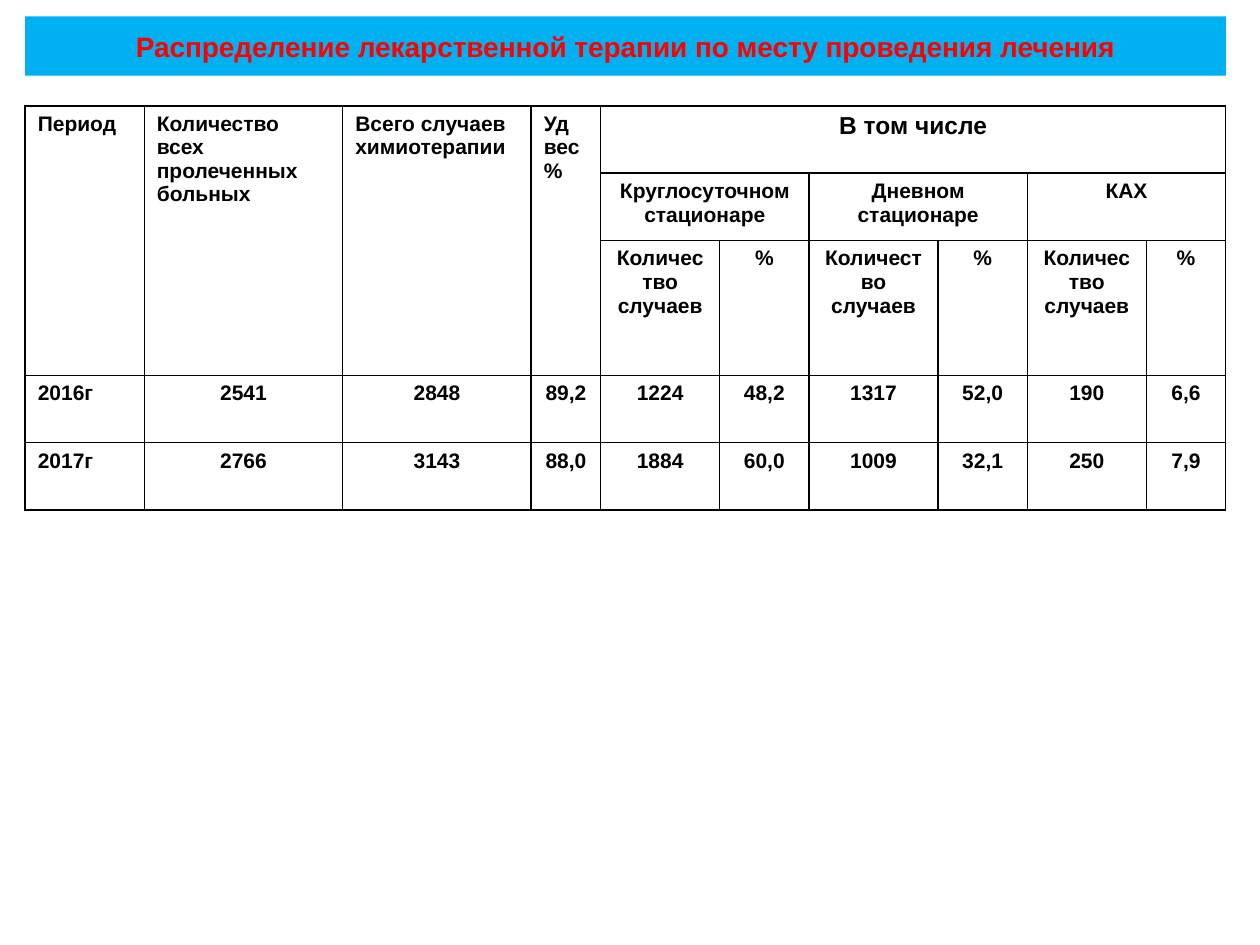
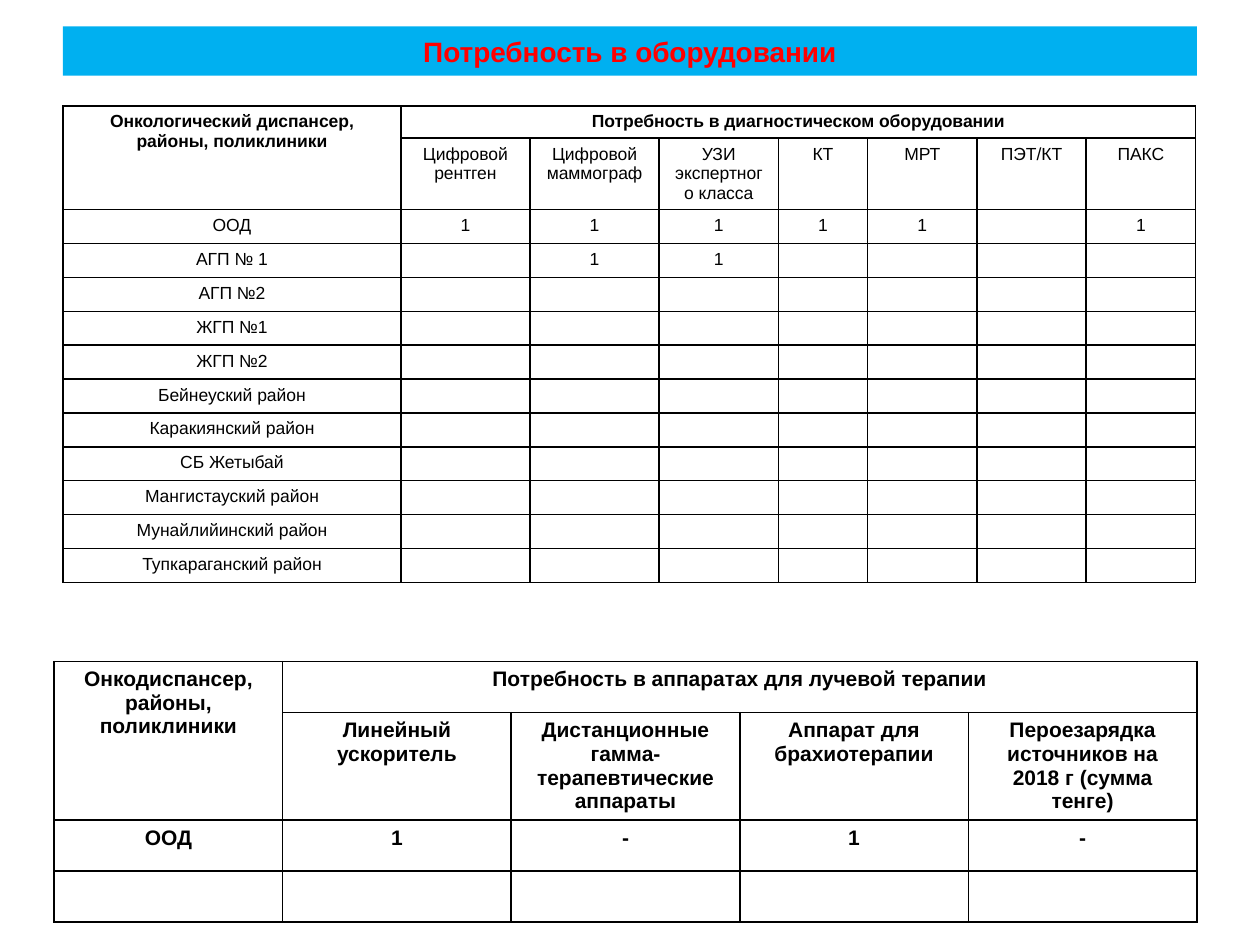
import pptx
import pptx.util
from lxml import etree
from pptx.dml.color import RGBColor
from pptx.enum.shapes import MSO_SHAPE
from pptx.enum.text import MSO_ANCHOR, PP_ALIGN
from pptx.oxml.ns import qn

# Shared look
BAND_BLUE = RGBColor(0x00, 0xB0, 0xF0)
TITLE_RED = RGBColor(0xFF, 0x00, 0x00)
BLACK = RGBColor(0x00, 0x00, 0x00)
FONT = "Arial"
TITLE_SIZE = 16
TABLE_TOP = 11.2  # percent of the slide's height

SLIDE_WIDTH = pptx.util.Inches(10)
SLIDE_HEIGHT = pptx.util.Inches(7.5)


def place(left, top, width, height):
    """Turn percents of the slide into a position and a size."""
    return [
        round(share * side / 100)
        for share, side in zip(
            (left, top, width, height), (SLIDE_WIDTH, SLIDE_HEIGHT) * 2
        )
    ]


def add_text(para, text, size, color=BLACK, bold=True, align=PP_ALIGN.CENTER):
    para.alignment = align
    if not text:
        # An empty cell keeps the height of its own text size
        etree.SubElement(para._p, qn("a:endParaRPr"), sz=str(size * 100))
        return
    span = para.add_run()
    span.text = text
    span.font.name = FONT
    span.font.size = pptx.util.Pt(size)
    span.font.bold = bold
    span.font.color.rgb = color


def add_title_band(page, text, area):
    band = page.shapes.add_shape(MSO_SHAPE.RECTANGLE, *place(*area))
    band.shadow.inherit = False
    band.fill.solid()
    band.fill.fore_color.rgb = BAND_BLUE
    band.line.fill.background()
    frame = band.text_frame
    frame.word_wrap = True
    frame.vertical_anchor = MSO_ANCHOR.MIDDLE
    add_text(frame.paragraphs[0], text, TITLE_SIZE, TITLE_RED)


def draw_borders(cell):
    properties = cell._tc.get_or_add_tcPr()
    for side in ("lnL", "lnR", "lnT", "lnB"):
        line = etree.SubElement(
            properties, qn(f"a:{side}"), w=str(pptx.util.Pt(1))
        )
        fill = etree.SubElement(line, qn("a:solidFill"))
        etree.SubElement(fill, qn("a:srgbClr"), val=str(BLACK))


def share_out(tracks, weights, total, attribute):
    """Divide a length among columns or rows by weight."""
    for track, weight in zip(tracks, weights):
        setattr(track, attribute, round(total * weight / sum(weights)))


def add_grid(page, area, columns, rows, texts, merges, style):
    """Draw a table; style(row, column) gives the text options of a cell."""
    left, top, width, height = place(*area)
    table = page.shapes.add_table(
        len(rows), len(columns), left, top, width, height
    ).table
    table.first_row = table.horz_banding = False
    share_out(table.columns, columns, width, "width")
    share_out(table.rows, rows, height, "height")

    for first_row, first_column, last_row, last_column in merges:
        table.cell(first_row, first_column).merge(
            table.cell(last_row, last_column)
        )
    for row, line in enumerate(texts):
        for column in range(len(columns)):
            cell = table.cell(row, column)
            draw_borders(cell)
            cell.fill.background()
            text = line[column] if column < len(line) else ""
            add_text(cell.text_frame.paragraphs[0], text, **style(row, column))


def therapy_style(row, column):
    in_left_header = row < 3 and column < 4
    return {
        "size": 14 if (row, column) == (0, 4) else 12,
        "align": PP_ALIGN.LEFT if in_left_header or column == 0
        else PP_ALIGN.CENTER,
    }


def add_therapy_slide(page):
    add_title_band(
        page,
        "Распределение лекарственной терапии по месту проведения лечения",
        (2, 1.73, 95.3, 6.27),
    )
    places = ["Круглосуточном стационаре", "Дневном стационаре", "КАХ"]
    texts = [
        ["Период", "Количество всех пролеченных больных",
         "Всего случаев химиотерапии", "Уд вес %", "В том числе"],
        [""] * 4 + [text for name in places for text in (name, "")],
        [""] * 4 + ["Количество случаев", "%"] * len(places),
        ["2016г", "2541", "2848", "89,2", "1224", "48,2", "1317", "52,0",
         "190", "6,6"],
        ["2017г", "2766", "3143", "88,0", "1884", "60,0", "1009", "32,1",
         "250", "7,9"],
    ]
    merges = [(0, column, 2, column) for column in range(4)]
    merges.append((0, 4, 0, 9))
    merges += [(1, column, 1, column + 1) for column in (4, 6, 8)]
    add_grid(
        page,
        area=(2, TABLE_TOP, 95.3, 42.8),
        columns=[12, 20, 19, 7, 12, 9, 13, 9, 12, 8],
        rows=[1, 1, 2, 1, 1],
        texts=texts,
        merges=merges,
        style=therapy_style,
    )


def add_equipment_slide(page):
    add_title_band(page, "Потребность в оборудовании", (5, 2.8, 90, 5.2))

    # Diagnostic equipment
    clinics = [
        "АГП №2", "ЖГП №1", "ЖГП №2", "Бейнеуский район",
        "Каракиянский район", "СБ Жетыбай", "Мангистауский район",
        "Мунайлийинский район", "Тупкараганский район",
    ]
    diagnostics = [
        ["Онкологический диспансер, районы, поликлиники",
         "Потребность в диагностическом оборудовании"],
        ["", "Цифровой рентген", "Цифровой маммограф",
         "УЗИ экспертного класса", "КТ", "МРТ", "ПЭТ/КТ", "ПАКС"],
        ["ООД", "1", "1", "1", "1", "1", "", "1"],
        ["АГП № 1", "", "1", "1"],
    ] + [[clinic] for clinic in clinics]
    add_grid(
        page,
        area=(5, TABLE_TOP, 89.9, 48.5),
        columns=[34, 13, 13, 12, 9, 11, 11, 11],
        rows=[9, 20] + [9] * (len(diagnostics) - 2),
        texts=diagnostics,
        merges=[(0, 0, 1, 0), (0, 1, 0, 7)],
        style=lambda row, column: {"size": 10, "bold": row == 0},
    )

    # Radiotherapy equipment
    radiotherapy = [
        ["Онкодиспансер, районы, поликлиники",
         "Потребность в аппаратах для лучевой терапии"],
        ["", "Линейный ускоритель",
         "Дистанционные гамма-терапевтические аппараты",
         "Аппарат для брахиотерапии",
         "Пероезарядка источников на 2018 г (сумма тенге)"],
        ["ООД", "1", "-", "1", "-"],
        [],
    ]
    add_grid(
        page,
        area=(4.3, 70, 90.7, 27.6),
        columns=[1] * 5,
        rows=[10, 21, 10, 10],
        texts=radiotherapy,
        merges=[(0, 0, 1, 0), (0, 1, 0, 4)],
        style=lambda row, column: {"size": 12},
    )


def main():
    deck = pptx.Presentation()
    deck.slide_width = SLIDE_WIDTH
    deck.slide_height = SLIDE_HEIGHT
    blank = deck.slide_layouts[6]
    for fill_page in (add_therapy_slide, add_equipment_slide):
        fill_page(deck.slides.add_slide(blank))
    deck.save("out.pptx")


if __name__ == "__main__":
    main()
